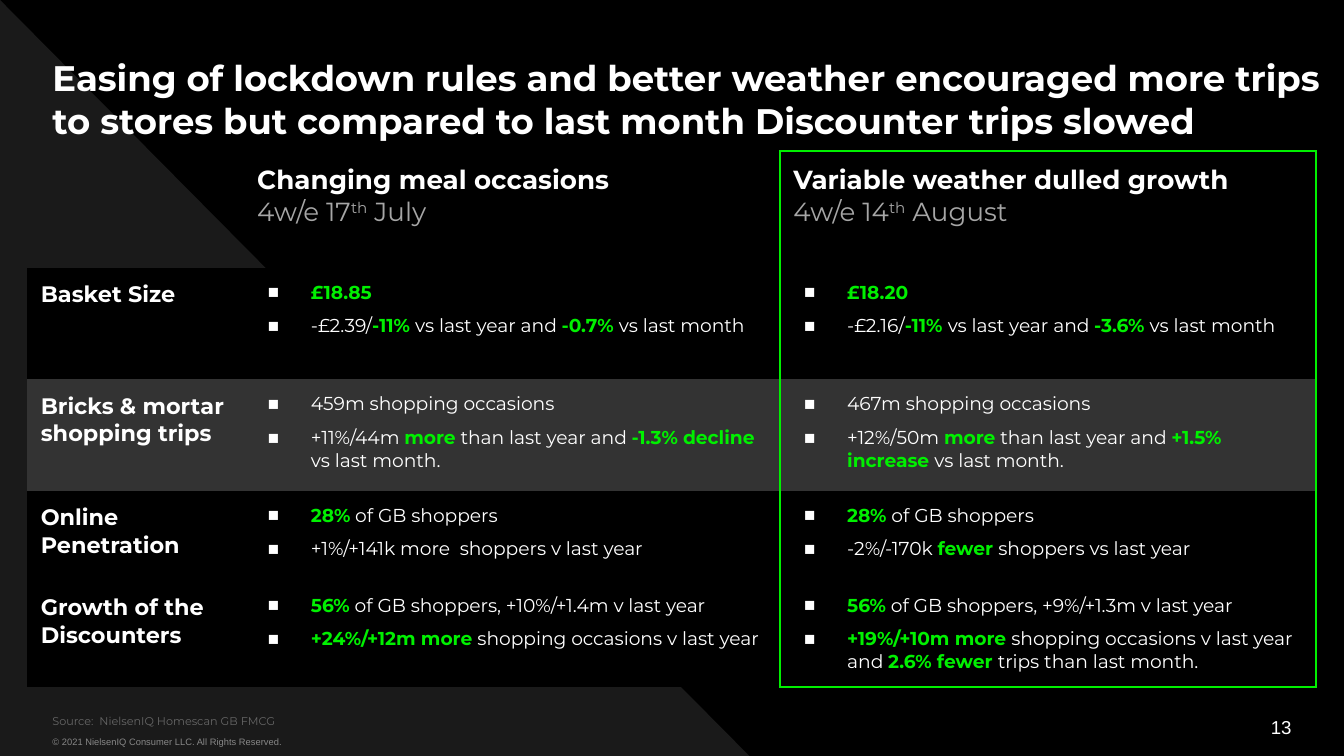
from lxml.etree import SubElement
from pptx import Presentation
from pptx.dml.color import RGBColor
from pptx.enum.shapes import MSO_SHAPE
from pptx.enum.text import MSO_ANCHOR, MSO_AUTO_SIZE, PP_ALIGN
from pptx.oxml import parse_xml
from pptx.oxml.ns import nsdecls, qn
from pptx.util import Inches, Pt

WIDTH = 10
HEIGHT = WIDTH * 9 / 16
BLACK, WHITE, GREEN = "000000", "FFFFFF", "00F000"
TRIANGLE_GRAY, BAND_GRAY, DATE_GRAY = "1A1A1A", "333333", "A6A6A6"
NO_TABLE_STYLE = "{2D5ABB26-0587-4C30-8999-92F81FD0307C}"
COLUMNS = [1.61, 3.99, 3.99]
ROWS = [0.87, 0.83, 0.83, 0.67, 0.67]

# Heading and date, with the ordinal suffix kept apart for superscript
PERIODS = [
    ("Changing meal occasions", ("4w/e 17", "th", " July")),
    ("Variable weather dulled growth", ("4w/e 14", "th", " August")),
]
# Label, band colour and the bullets of each period; *asterisks* mark highlights
MEASURES = [
    ("Basket Size", BLACK,
     ["*£18.85*", "-£2.39/*-11% *vs last year and *-0.7% *vs last month"],
     ["*£18.20*", "-£2.16/*-11% *vs last year and *-3.6% *vs last month"]),
    ("Bricks & mortar shopping trips", BAND_GRAY,
     ["459m shopping occasions",
      "+11%/44m *more* than last year and *-1.3% decline *vs last month."],
     ["467m shopping occasions",
      "+12%/50m *more* than last year and *+1.5% increase *vs last month."]),
    ("Online Penetration", BLACK,
     ["*28%* of GB shoppers", "+1%/+141k more  shoppers v last year"],
     ["*28%* of GB shoppers", "-2%/-170k *fewer *shoppers vs last year"]),
    ("Growth of the Discounters", BLACK,
     ["*56%* of GB shoppers, +10%/+1.4m v last year",
      "*+24%/+12m more *shopping occasions v last year"],
     ["*56%* of GB shoppers, +9%/+1.3m v last year",
      "*+19%/+10m more *shopping occasions v last year and "
      "*2.6% fewer *trips than last month."]),
]


def color(hex_text):
    return RGBColor.from_string(hex_text)


def apply(target, values):
    for name, value in values.items():
        setattr(target, name, value)


def box_of(left, top, width, height):
    """Turn percentages of the slide into lengths."""
    return (Inches(left * WIDTH / 100), Inches(top * HEIGHT / 100),
            Inches(width * WIDTH / 100), Inches(height * HEIGHT / 100))


def add_run(paragraph, text, size, hex_text, bold=False, name="Montserrat"):
    run = paragraph.add_run()
    run.text = text
    apply(run.font, {"size": Pt(size), "bold": bold, "name": name})
    run.font.color.rgb = color(hex_text)
    return run


def format_frame(frame, inset, anchor=MSO_ANCHOR.TOP):
    apply(frame, {
        "word_wrap": True, "auto_size": MSO_AUTO_SIZE.NONE,
        "vertical_anchor": anchor, "margin_left": 0, "margin_right": 0,
        "margin_top": Inches(inset), "margin_bottom": Inches(inset)})


def add_background(slide, box):
    slide.background.fill.solid()
    slide.background.fill.fore_color.rgb = color(BLACK)
    triangle = slide.shapes.add_shape(MSO_SHAPE.RIGHT_TRIANGLE, *box)
    triangle.shadow.inherit = False
    triangle.fill.solid()
    triangle.fill.fore_color.rgb = color(TRIANGLE_GRAY)
    triangle.line.fill.background()
    # Send it behind the title
    triangle.element.getparent().insert(2, triangle.element)


def add_title(slide, box, text):
    title = slide.shapes.title
    apply(title, dict(zip(("left", "top", "width", "height"), box)))
    format_frame(title.text_frame, 0.1)
    paragraph = title.text_frame.paragraphs[0]
    paragraph.alignment = PP_ALIGN.LEFT
    add_run(paragraph, text, 19, WHITE, True)


def add_note(slide, box, text, size, hex_text, name="Arial", inset=0.05,
             anchor=MSO_ANCHOR.TOP, alignment=PP_ALIGN.LEFT):
    frame = slide.shapes.add_textbox(*box).text_frame
    format_frame(frame, inset, anchor)
    paragraph = frame.paragraphs[0]
    paragraph.alignment = alignment
    add_run(paragraph, text, size, hex_text, name=name)


def add_bullet(paragraph):
    properties = paragraph._p.get_or_add_pPr()
    properties.set("marL", str(Inches(0.4)))
    properties.set("indent", str(Inches(-0.32)))
    bullet_color = SubElement(properties, qn("a:buClr"))
    SubElement(bullet_color, qn("a:srgbClr"), val=WHITE)
    SubElement(properties, qn("a:buFont"), typeface="Arial")
    SubElement(properties, qn("a:buChar"), char="■")


def set_borders(cell, sides):
    """Draw green lines on the sides, given in the order L, R, T, B."""
    properties = cell._tc.get_or_add_tcPr()
    for index, side in enumerate(sides):
        properties.insert(index, parse_xml(
            f'<a:ln{side} {nsdecls("a")} w="{Pt(1)}"><a:solidFill>'
            f'<a:srgbClr val="{GREEN}"/></a:solidFill></a:ln{side}>'))


def fill_heading(cell, heading, date):
    frame = cell.text_frame
    add_run(frame.paragraphs[0], heading, 14, WHITE, True)
    paragraph = frame.add_paragraph()
    runs = [add_run(paragraph, part, 14, DATE_GRAY) for part in date]
    runs[1].font._element.set("baseline", "30000")


def fill_bullets(cell, bullets):
    frame = cell.text_frame
    for index, bullet in enumerate(bullets):
        paragraph = frame.add_paragraph() if index else frame.paragraphs[0]
        add_bullet(paragraph)
        if index:
            paragraph.space_before = Pt(6)
        for part, text in enumerate(bullet.split("*")):
            highlighted = part % 2 == 1
            if text:
                add_run(paragraph, text, 10,
                        GREEN if highlighted else WHITE, highlighted)


def add_comparison(slide, box):
    table = slide.shapes.add_table(len(ROWS), len(COLUMNS), *box).table
    apply(table, {"first_row": False, "horz_banding": False})
    table._tbl.tblPr.find(qn("a:tableStyleId")).text = NO_TABLE_STYLE
    for column, width in zip(table.columns, COLUMNS):
        column.width = Inches(width)
    for row, height in zip(table.rows, ROWS):
        row.height = Inches(height)
    for cell in table.iter_cells():
        apply(cell, {f"margin_{side}": Inches(0.1)
                     for side in ("left", "right", "top", "bottom")})
        cell.fill.background()

    # Period headings
    for column, (heading, date) in enumerate(PERIODS, 1):
        fill_heading(table.cell(0, column), heading, date)

    # One band for each measure
    for row, (label, band, *periods) in enumerate(MEASURES, 1):
        for column in range(len(COLUMNS)):
            fill = table.cell(row, column).fill
            fill.solid()
            fill.fore_color.rgb = color(band)
        add_run(table.cell(row, 0).text_frame.paragraphs[0], label, 12, WHITE, True)
        for column, bullets in enumerate(periods, 1):
            fill_bullets(table.cell(row, column), bullets)

    # Green frame round the latest period
    last = len(ROWS) - 1
    for row in range(len(ROWS)):
        set_borders(table.cell(row, 1), "R")
        edge = "T" if row == 0 else "B" if row == last else ""
        set_borders(table.cell(row, 2), "LR" + edge)


def main():
    presentation = Presentation()
    apply(presentation, {"slide_width": Inches(WIDTH),
                         "slide_height": Inches(HEIGHT)})
    slide = presentation.slides.add_slide(presentation.slide_layouts[5])
    add_background(slide, box_of(0, 0, 55.9, 100.27))
    add_title(slide, box_of(3.9, 5.7, 94.8, 13.2),
              "Easing of lockdown rules and better weather encouraged more trips "
              "to stores but compared to last month Discounter trips slowed")
    # Footer
    add_note(slide, box_of(3.9, 96.5, 55.4, 3.56),
             "© 2021 NielsenIQ Consumer LLC. All Rights Reserved.", 5, "888888")
    add_note(slide, box_of(73.6, 93.5, 22.5, 5.33), "13", 10, WHITE,
             anchor=MSO_ANCHOR.MIDDLE, alignment=PP_ALIGN.RIGHT)
    add_note(slide, box_of(3.9, 94.5, 89.2, 3.56),
             "Source:  NielsenIQ Homescan GB FMCG", 6, "666666", "Montserrat",
             0.1, MSO_ANCHOR.BOTTOM)
    add_comparison(slide, box_of(2.04, 19.95, 95.9, 70.9))
    presentation.save("out.pptx")


if __name__ == "__main__":
    main()
